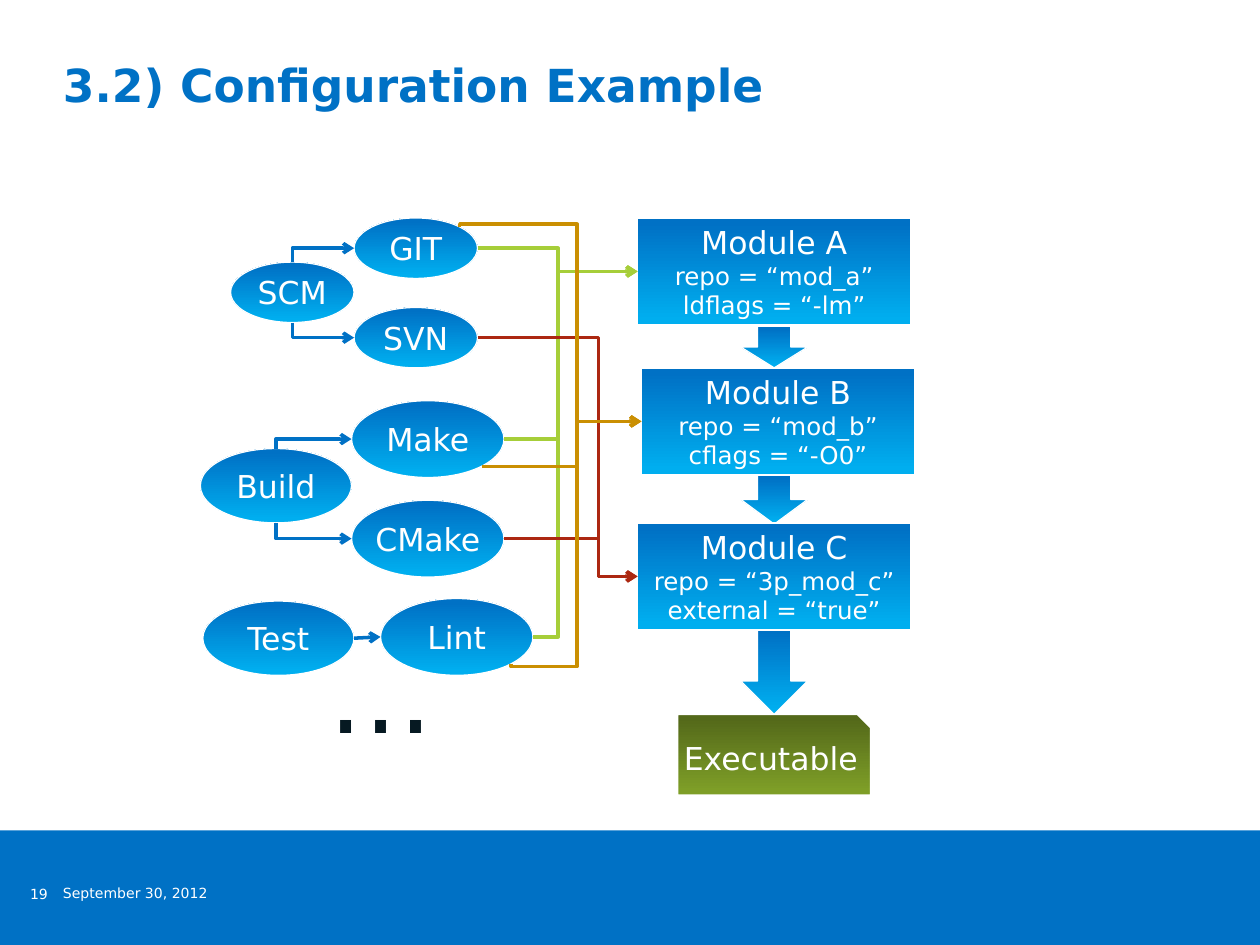
from lxml import etree
from pptx import Presentation
from pptx.dml.color import RGBColor
from pptx.enum.shapes import MSO_CONNECTOR as Connector, MSO_SHAPE as Shape
from pptx.enum.text import MSO_ANCHOR as Anchor, PP_ALIGN as Align
from pptx.oxml.ns import qn
from pptx.util import Inches, Pt

FONT = "DejaVu Sans"
COLORS = {
    "blue": "0071C5", "sky": "00AEEF", "white": "FFFFFF", "ink": "061922",
    "lime": "A6CE39", "gold": "CA8F02", "red": "AC2811",
    "olive": "7E9E27", "moss": "54691A",
}


def rgb(name):
    return RGBColor.from_string(COLORS[name])


def write(shape, text, sizes, color="white", align=Align.CENTER, anchor=Anchor.MIDDLE,
          bold=False, wrap=True):
    frame = shape.text_frame
    frame.margin_left = frame.margin_right = frame.margin_top = frame.margin_bottom = 0
    frame.word_wrap = wrap
    frame.vertical_anchor = anchor
    frame.text = text
    for paragraph, size in zip(frame.paragraphs, sizes):
        paragraph.alignment = align
        for run in paragraph.runs:
            run.font.name = FONT
            run.font.size = Pt(size)
            run.font.bold = bold
            run.font.color.rgb = rgb(color)


def add_label(slide, box, text, size, **style):
    label = slide.shapes.add_textbox(*map(Inches, box))
    write(label, text, [size], **style)


def add_block(slide, kind, box, text="", sizes=(18,), bottom="sky", top="blue"):
    block = slide.shapes.add_shape(kind, *map(Inches, box))
    block.shadow.inherit = False
    block.fill.gradient()
    block.fill.gradient_angle = 90
    for stop, position, color in zip(block.fill.gradient_stops, (0.05, 0.95), (bottom, top)):
        stop.position = position
        stop.color.rgb = rgb(color)
    block.line.color.rgb = rgb("white")
    block.line.width = Pt(0.75)
    if text:
        write(block, text, sizes)
    return block


def site(shape, across, down):
    return (shape.left + int(shape.width * (1 + across) / 2),
            shape.top + int(shape.height * (1 + down) / 2))


def add_wire(slide, start, end, color, kind=Connector.STRAIGHT):
    wire = slide.shapes.add_connector(kind, *start, *end)
    wire.line.color.rgb = rgb(color)
    wire.line.width = Pt(2)
    etree.SubElement(wire.line._ln, qn("a:tailEnd"), type="arrow")
    etree.SubElement(wire._element.spPr, qn("a:effectLst"))
    return wire


def set_bends(wire, preset, *ratios):
    geometry = wire._element.spPr.find(qn("a:prstGeom"))
    geometry.set("prst", preset)
    guides = geometry.get_or_add_avLst()
    for number, ratio in enumerate(ratios, 1):
        etree.SubElement(guides, qn("a:gd"), name=f"adj{number}",
                         fmla=f"val {round(ratio * 100000)}")


def add_level_wire(slide, start, end, color, bus):
    wire = add_wire(slide, start, end, color, Connector.ELBOW)
    set_bends(wire, "bentConnector3", (bus - start[0]) / (end[0] - start[0]))


def add_upright_wire(slide, start, end, color, preset, *ratios):
    wire = add_wire(slide, start, end, color, Connector.ELBOW)
    run, rise = end[0] - start[0], abs(end[1] - start[1])
    wire.left = (start[0] + end[0] - rise) // 2
    wire.top = (start[1] + end[1] - run) // 2
    wire.width, wire.height = rise, run
    transform = wire._element.spPr.find(qn("a:xfrm"))
    going_down = end[1] > start[1]
    transform.set("rot", str((270 if going_down else 90) * 60000))
    transform.set("flipH", "1")
    transform.set("flipV", "0" if going_down else "1")
    set_bends(wire, preset, *ratios)


def add_tool_group(slide, left, top, parent, parent_drop, parent_size, tools, tool_size,
                   indent, pitch):
    root = add_block(slide, Shape.OVAL, (left, top + parent_drop, *parent_size), parent)
    ovals = {}
    for row, name in enumerate(tools):
        box = (left + indent, top + row * pitch, *tool_size)
        ovals[name] = add_block(slide, Shape.OVAL, box, name)
        target = site(ovals[name], -1, 0)
        if len(tools) == 1:
            add_wire(slide, site(root, 1, 0), target, "blue")
        else:
            add_upright_wire(slide, site(root, 0, 2 * row - 1), target, "blue",
                             "bentConnector2")
    return ovals


def add_tools(slide, left, top):
    large, parent = (1.21, 0.61), (1.2, 0.59)
    small = (0.98, 0.48)
    ovals = add_tool_group(slide, left + 0.24, top, "SCM", 0.35, small,
                           ("GIT", "SVN"), small, 0.98, 0.71)
    ovals |= add_tool_group(slide, left, top + 1.45, "Build", 0.38, parent,
                            ("Make", "CMake"), large, 1.2, 0.79)
    ovals |= add_tool_group(slide, left + 0.02, top + 3.02, "Test", 0.02, parent,
                            ("Lint",), large, 1.41, 0)
    add_label(slide, (left + 1.02, top + 3.25, 0.69, 1.01), "…", 60, color="ink", wrap=False)
    return ovals


def add_modules(slide, left, top):
    for drop, height in ((0.86, 0.33), (2.04, 0.39), (3.25, 0.69)):
        add_block(slide, Shape.DOWN_ARROW, (left + 0.82, top + drop, 0.53, height))
    modules = {}
    for letter, shift, drop, settings in (
        ("A", 0, 0, "repo = “mod_a”\nldflags = “-lm”"),
        ("B", 0.03, 1.19, "repo = “mod_b”\ncflags = “-O0”"),
        ("C", 0, 2.42, "repo = “3p_mod_c”\nexternal = “true”"),
    ):
        box = (left + shift, top + drop, 2.17, 0.85)
        modules[letter] = add_block(slide, Shape.RECTANGLE, box,
                                    f"Module {letter}\n{settings}", (18, 14, 14))
    add_block(slide, Shape.SNIP_1_RECTANGLE, (left + 0.32, top + 3.94, 1.53, 0.64),
              "Executable", bottom="olive", top="moss")
    return modules


def add_wiring(slide, tools, modules):
    for letter, color, bus, names in (
        ("A", "lime", 4.43, ("GIT", "Make", "Lint")),
        ("C", "red", 4.75, ("SVN", "CMake")),
    ):
        for name in names:
            add_level_wire(slide, site(tools[name], 1, 0), site(modules[letter], -1, 0),
                           color, Inches(bus))
    end = site(modules["B"], -1, 0)
    diagonal = 0.71
    for name, side, stub in (("GIT", -1, 0.02), ("Make", 1, 0), ("Lint", 1, 0.02)):
        start = site(tools[name], diagonal, side * diagonal)
        add_upright_wire(slide, start, end, "gold", "bentConnector4",
                         -Inches(stub) / abs(end[1] - start[1]),
                         (Inches(4.58) - start[0]) / (end[0] - start[0]))


def add_footer(slide, left, top, width, height):
    band = slide.shapes.add_shape(Shape.RECTANGLE, *map(Inches, (left, top, width, height)))
    band.shadow.inherit = False
    band.fill.solid()
    band.fill.fore_color.rgb = rgb("blue")
    band.line.fill.background()
    add_label(slide, (left + 0.5, top + 0.43, 1.47, 0.13), "September 30, 2012", 8,
              align=Align.LEFT, anchor=Anchor.TOP)
    add_label(slide, (left + 0.19, top + 0.44, 0.19, 0.13), "19", 8,
              align=Align.RIGHT, anchor=Anchor.TOP, wrap=False)


def main():
    presentation = Presentation()
    presentation.slide_width, presentation.slide_height = Inches(10), Inches(7.5)
    slide = presentation.slides.add_slide(presentation.slide_layouts[6])
    add_footer(slide, 0, 6.59, 10, 0.91)
    add_label(slide, (0.5, 0.45, 9, 0.97), "3.2) Configuration Example", 26, color="blue",
              align=Align.LEFT, anchor=Anchor.TOP, bold=True)
    tools = add_tools(slide, 1.59, 1.73)
    modules = add_modules(slide, 5.06, 1.73)
    add_wiring(slide, tools, modules)
    presentation.save("out.pptx")


if __name__ == "__main__":
    main()
